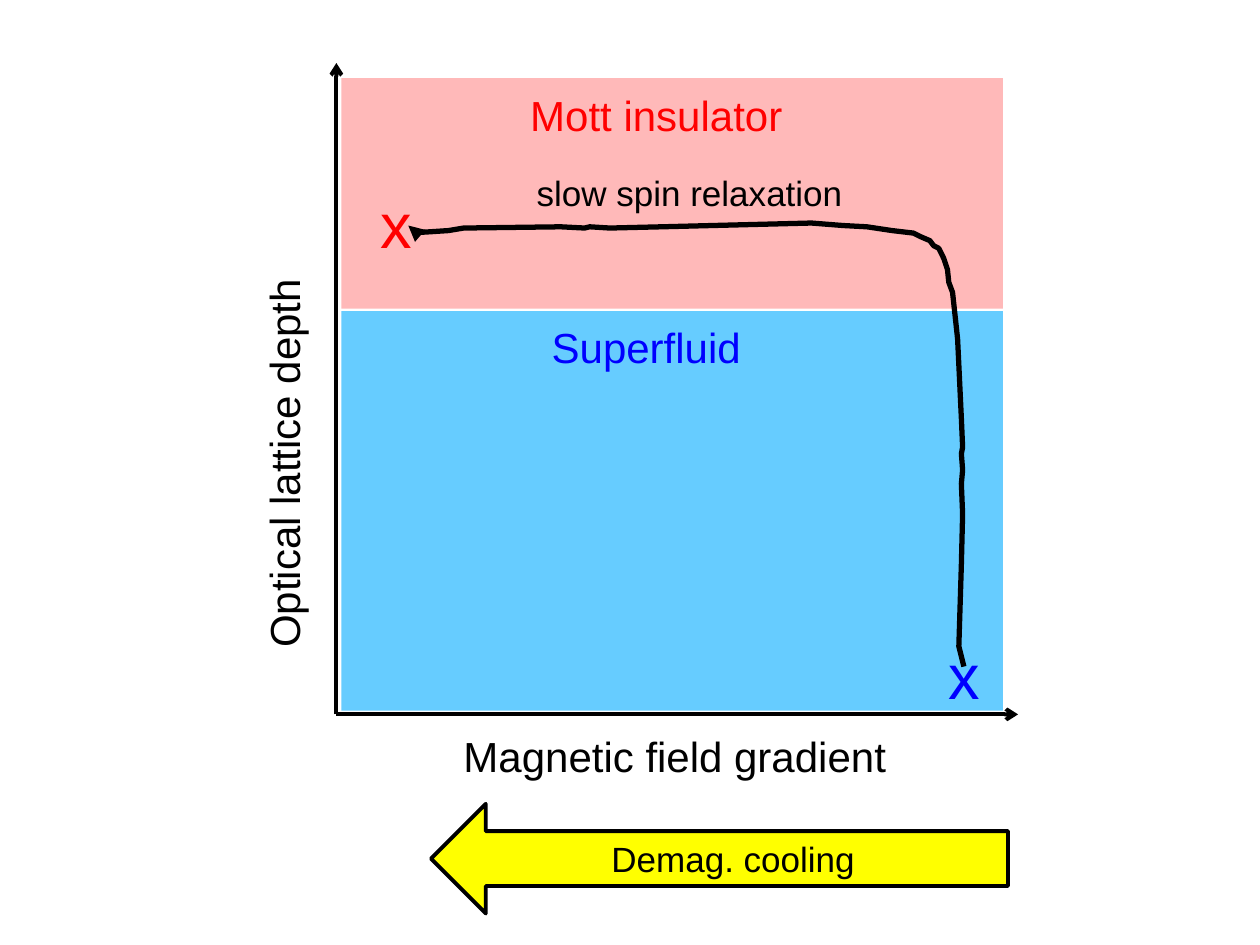
import pptx
import pptx.util
import pptx.dml.color
import pptx.enum.shapes
import pptx.enum.text
import pptx.oxml
import pptx.oxml.ns
from dataclasses import dataclass

Inches = pptx.util.Inches
Shapes = pptx.enum.shapes.MSO_SHAPE


@dataclass(frozen=True)
class Theme:
    font: str = "Arial"
    ink: str = "000000"
    insulator: str = "FF0000"
    insulator_fill: str = "FFB9B9"
    superfluid: str = "0000FF"
    superfluid_fill: str = "66CCFF"
    cooling_fill: str = "FFFF00"
    note_size: int = 20
    label_size: int = 24
    marker_size: int = 36
    axis_width: float = 2.25
    path_width: float = 3


def rgb(color):
    return pptx.dml.color.RGBColor.from_string(color)


class PhaseDiagram:
    def __init__(self, page, theme):
        self.page = page
        self.theme = theme

    def stroke(self, shape, width, head=None):
        shape.line.color.rgb = rgb(self.theme.ink)
        shape.line.width = pptx.util.Pt(width)
        if head:
            outline = shape.line._get_or_add_ln()
            end = pptx.oxml.parse_xml(
                f'<a:tailEnd {pptx.oxml.ns.nsdecls("a")} type="{head}"/>')
            outline.append(end)

    def add_words(self, box, text, size, color):
        para = box.text_frame.paragraphs[0]
        span = para.add_run()
        span.text = text
        span.font.name = self.theme.font
        span.font.size = pptx.util.Pt(size)
        span.font.color.rgb = rgb(color)
        return para

    def block(self, kind, left, top, width, height, fill):
        shape = self.page.shapes.add_shape(
            kind, Inches(left), Inches(top), Inches(width), Inches(height))
        shape.shadow.inherit = False
        shape.fill.solid()
        shape.fill.fore_color.rgb = rgb(fill)
        shape.line.fill.background()
        return shape

    def axis(self, start, end):
        line = self.page.shapes.add_connector(
            pptx.enum.shapes.MSO_CONNECTOR.STRAIGHT,
            *map(Inches, start), *map(Inches, end))
        self.stroke(line, self.theme.axis_width, "arrow")
        line._element.spPr.append(pptx.oxml.parse_xml(
            f'<a:effectLst {pptx.oxml.ns.nsdecls("a")}/>'))

    def label(self, text, left, top, width, height, size, color, rotation=0):
        box = self.page.shapes.add_textbox(
            Inches(left), Inches(top), Inches(width), Inches(height))
        box.rotation = rotation
        box.text_frame.word_wrap = False
        box.text_frame.auto_size = pptx.enum.text.MSO_AUTO_SIZE.SHAPE_TO_FIT_TEXT
        self.add_words(box, text, size, color)

    def trajectory(self, points):
        start, *rest = [(Inches(x), Inches(y)) for x, y in points]
        builder = self.page.shapes.build_freeform(*start, scale=1.0)
        builder.add_line_segments(rest, close=False)
        shape = builder.convert_to_shape()
        shape.shadow.inherit = False
        shape.fill.background()
        self.stroke(shape, self.theme.path_width, "triangle")

    def block_arrow(self, text, left, top, width, height, fill):
        arrow = self.block(Shapes.LEFT_ARROW, left, top, width, height, fill)
        self.stroke(arrow, self.theme.axis_width)
        arrow.text_frame.word_wrap = True
        arrow.text_frame.vertical_anchor = pptx.enum.text.MSO_ANCHOR.MIDDLE
        para = self.add_words(arrow, text, self.theme.note_size, self.theme.ink)
        para.alignment = pptx.enum.text.PP_ALIGN.CENTER


def main():
    deck = pptx.Presentation()
    deck.slide_width = Inches(10)
    deck.slide_height = Inches(7.5)
    theme = Theme()
    page = deck.slides.add_slide(deck.slide_layouts[6])
    diagram = PhaseDiagram(page, theme)

    diagram.block(Shapes.RECTANGLE, 2.71, 0.62, 5.25, 1.83, theme.insulator_fill)
    diagram.block(Shapes.RECTANGLE, 2.71, 2.47, 5.25, 3.17, theme.superfluid_fill)

    origin = (2.67, 5.67)
    diagram.axis(origin, (8.08, 5.67))
    diagram.axis(origin, (2.67, 0.5))

    labels = [
        ("Magnetic field gradient", 3.58, 5.75, 3.59, 0.5,
         theme.label_size, theme.ink),
        ("Optical lattice depth", 0.67, 3.41, 3.16, 0.5,
         theme.label_size, theme.ink, 270),
        ("x", 7.43, 5, 0.45, 0.71, theme.marker_size, theme.superfluid),
        ("x", 2.92, 1.42, 0.45, 0.71, theme.marker_size, theme.insulator),
        ("Superfluid", 4.28, 2.5, 1.72, 0.5, theme.label_size, theme.superfluid),
        ("Mott insulator", 4.11, 0.66, 2.22, 0.5,
         theme.label_size, theme.insulator),
    ]
    for label in labels:
        diagram.label(*label)

    diagram.trajectory([
        (7.65, 5.29), (7.64, 5.25), (7.61, 5.13), (7.63, 4.48), (7.64, 4.08),
        (7.63, 3.84), (7.64, 3.73), (7.63, 3.6), (7.64, 3.55), (7.63, 3.32),
        (7.6, 2.69), (7.57, 2.41), (7.56, 2.32), (7.53, 2.24), (7.52, 2.14),
        (7.49, 2.05), (7.45, 1.97), (7.41, 1.95), (7.38, 1.91), (7.31, 1.88),
        (7.25, 1.85), (7.08, 1.83), (6.88, 1.8), (6.69, 1.79), (6.44, 1.77),
        (5.25, 1.8), (4.84, 1.81), (4.68, 1.8), (4.64, 1.81), (4.45, 1.8),
        (3.68, 1.81), (3.56, 1.83), (3.41, 1.84), (3.24, 1.85), (3.24, 1.79),
    ])
    diagram.block_arrow("Demag. cooling", 3.42, 6.38, 4.58, 0.87,
                        theme.cooling_fill)
    diagram.label("slow spin relaxation", 4.16, 1.31, 2.65, 0.44,
                  theme.note_size, theme.ink)

    deck.save("out.pptx")


if __name__ == "__main__":
    main()
